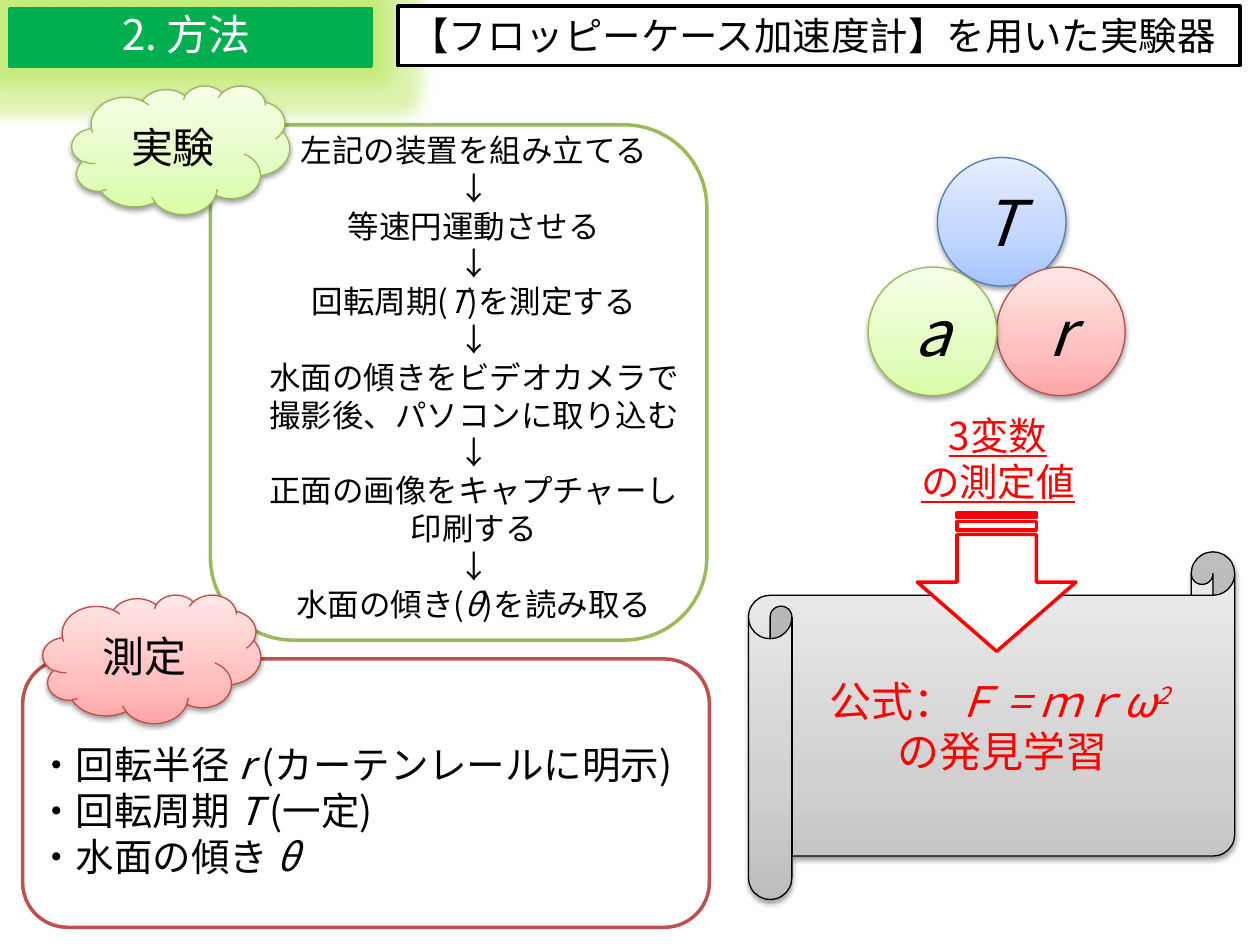
"""Build the slide on the method of the floppy-case accelerometer experiment."""
from dataclasses import dataclass

from lxml import etree
from pptx import Presentation
from pptx.dml.color import RGBColor
from pptx.enum.shapes import MSO_SHAPE
from pptx.enum.text import MSO_ANCHOR, MSO_AUTO_SIZE, PP_ALIGN
from pptx.oxml import parse_xml
from pptx.oxml.ns import qn
from pptx.util import Emu, Pt

RECTANGLE = MSO_SHAPE.RECTANGLE
ROUNDED = MSO_SHAPE.ROUNDED_RECTANGLE
OVAL = MSO_SHAPE.OVAL
CLOUD = MSO_SHAPE.CLOUD
SCROLL = MSO_SHAPE.HORIZONTAL_SCROLL
ARROW = MSO_SHAPE.STRIPED_RIGHT_ARROW
CENTER, LEFT = PP_ALIGN.CENTER, PP_ALIGN.LEFT
TOP, MIDDLE = MSO_ANCHOR.TOP, MSO_ANCHOR.MIDDLE
GROW = MSO_AUTO_SIZE.SHAPE_TO_FIT_TEXT

PX = 9144
DRAWING = "http://schemas.openxmlformats.org/drawingml/2006/main"
EFFECTS = '<a:effectLst xmlns:a="%s">%s</a:effectLst>'
COLOR = '<a:srgbClr val="%s"><a:alpha val="%d"/></a:srgbClr>'


@dataclass(frozen=True)
class Theme:
    """Colours, font and type sizes of the slide."""
    font: str = "Noto Sans CJK JP"
    black: str = "000000"
    white: str = "FFFFFF"
    red: str = "FF0000"
    header: str = "00B050"
    glow: str = "A8E034"
    green_line: str = "9BBB59"
    red_line: str = "C0504D"
    gray: tuple = ("BDBDBD", "D1D1D1", "EEEEEE", "000000")
    blue: tuple = ("A4C4FF", "BFD4FF", "E6EEFF", "4B7EBC")
    rose: tuple = ("FFA6A5", "FFC0BF", "FFE7E7", "BF4C48")
    lime: tuple = ("DAFDA7", "E4FCC2", "F5FFE7", "98B955")
    small: int = 18
    body: int = 22
    title: int = 24
    symbol: int = 36


def add_run(paragraph, text, *, font, size, color, italic=False, underline=False, baseline=0):
    """Append one formatted run to a paragraph."""
    run = paragraph.add_run()
    run.text = text
    run.font.name = font
    run.font.size = Pt(size)
    run.font.color.rgb = RGBColor.from_string(color)
    run.font.italic = italic
    run.font.underline = underline
    properties = run.font._element
    etree.SubElement(properties, qn("a:ea")).set("typeface", font)
    if baseline:
        properties.set("baseline", str(baseline))


class SlideBuilder:
    """Hold the theme and the current slide, and add elements to it."""

    def __init__(self, slide, theme):
        """Keep the slide and its theme."""
        self.slide = slide
        self.theme = theme

    def set_lines(self, shape, lines, size, color=None, align=CENTER, anchor=TOP,
                  wrap=True, underline=False):
        """Fill a shape with lines, where *marks* set italics and ^ starts a superscript."""
        frame = shape.text_frame
        frame.word_wrap = wrap
        frame.vertical_anchor = anchor
        style = dict(font=self.theme.font, size=size, color=color or self.theme.black,
                     underline=underline)
        for index, line in enumerate(lines):
            paragraph = frame.paragraphs[0] if index == 0 else frame.add_paragraph()
            paragraph.alignment = align
            for part, piece in enumerate(line.split("*")):
                base, _, power = piece.partition("^")
                italic = part % 2 == 1
                if base:
                    add_run(paragraph, base, italic=italic, **style)
                if power:
                    add_run(paragraph, power, italic=italic, baseline=30000, **style)

    def text(self, box, lines, size, **style):
        """Add a text box that grows with its text."""
        shape = self.slide.shapes.add_textbox(*(Emu(n * PX) for n in box))
        self.set_lines(shape, lines, size, **style)
        shape.text_frame.auto_size = GROW

    def panel(self, kind, box, line, fill=None, weight=2):
        """Add a flat shape with an outline and an optional fill."""
        shape = self.slide.shapes.add_shape(kind, *(Emu(n * PX) for n in box))
        shape.shadow.inherit = False
        shape.line.color.rgb = RGBColor.from_string(line)
        shape.line.width = Pt(weight)
        if fill:
            shape.fill.solid()
            shape.fill.fore_color.rgb = RGBColor.from_string(fill)
        else:
            shape.fill.background()
        return shape

    def effect(self, shape, content):
        """Replace the effect list of a shape."""
        properties = shape._element.spPr
        old = properties.find(qn("a:effectLst"))
        properties.replace(old, parse_xml(EFFECTS % (DRAWING, content)))

    def glow(self, shape, color):
        """Surround a shape with a soft glow."""
        self.effect(shape, '<a:glow rad="228600">%s</a:glow>' % (COLOR % (color, 40000)))

    def glossy(self, kind, box, palette, lines, size, color=None):
        """Add a shape with a vertical gradient, a soft shadow and centred text."""
        *stops, line = palette
        shape = self.panel(kind, box, line, weight=0.75)
        gradient = "".join(
            '<a:gs pos="%d"><a:srgbClr val="%s"/></a:gs>' % (position * 1000, stop)
            for position, stop in zip((0, 35, 100), stops))
        properties = shape._element.spPr
        properties.replace(properties.find(qn("a:noFill")), parse_xml(
            '<a:gradFill xmlns:a="%s" rotWithShape="1"><a:gsLst>%s</a:gsLst>'
            '<a:lin ang="16200000" scaled="1"/></a:gradFill>' % (DRAWING, gradient)))
        self.effect(shape, '<a:outerShdw blurRad="40000" dist="20000" dir="5400000" '
                    'rotWithShape="0">%s</a:outerShdw>' % (COLOR % (self.theme.black, 38000)))
        self.set_lines(shape, lines, size, color=color, anchor=MIDDLE)


def build(builder):
    """Place all elements from back to front."""
    theme = builder.theme
    builder.glossy(SCROLL, (594, 438, 386, 276), theme.gray,
                   ["公式：*Ｆ = ｍｒω^2 *", "の発見学習"], theme.title, color=theme.red)
    header = builder.panel(RECTANGLE, (8, 7, 287, 46), theme.header, theme.header)
    builder.glow(header, theme.glow)
    builder.text((12, 2, 272, 51), ["2. 方法"], theme.title, color=theme.white)
    subject = builder.panel(RECTANGLE, (316, 5, 668, 47), theme.black, theme.white)
    builder.set_lines(subject, ["【フロッピーケース加速度計】を用いた実験器"], theme.body,
                      align=LEFT, wrap=False)
    builder.text((720, 322, 144, 84), ["3変数", "の測定値"], theme.body,
                 color=theme.red, wrap=False, underline=True)

    for left, top, palette, symbol in (
            (744, 125, theme.blue, "T"),
            (791, 212, theme.rose, "r"),
            (689, 212, theme.lime, "a")):
        builder.glossy(OVAL, (left, top, 102, 102), palette, [f"*{symbol}*"], theme.symbol)

    builder.panel(ROUNDED, (167, 99, 394, 409), theme.green_line, theme.white)
    builder.glossy(CLOUD, (57, 68, 173, 102), theme.lime, ["実験"], theme.title)
    steps = (
        ["左記の装置を組み立てる"],
        ["等速円運動させる"],
        ["回転周期(*T*)を測定する"],
        ["水面の傾きをビデオカメラで", "撮影後、パソコンに取り込む"],
        ["正面の画像をキャプチャーし", "印刷する"],
        ["水面の傾き(*θ*)を読み取る"],
    )
    lines = [line for step in steps for line in (*step, "↓")][:-1]
    builder.text((202, 99, 348, 404), lines, theme.small, wrap=False)

    builder.text((20, 583, 560, 121),
                 ["・回転半径 *r* (カーテンレールに明示)", "・回転周期 *T* (一定)", "・水面の傾き *θ*"],
                 theme.body, align=LEFT, wrap=False)
    builder.panel(ROUNDED, (18, 523, 545, 213), theme.red_line)
    builder.glossy(CLOUD, (34, 472, 173, 102), theme.rose, ["測定"], theme.title)
    arrow = builder.panel(ARROW, (736, 399, 110, 126), theme.red, theme.white)
    arrow.rotation = 90


def main():
    """Create the presentation and save it."""
    presentation = Presentation()
    presentation.slide_width = Emu(1000 * PX)
    presentation.slide_height = Emu(750 * PX)
    slide = presentation.slides.add_slide(presentation.slide_layouts[6])
    build(SlideBuilder(slide, Theme()))
    presentation.save("out.pptx")


if __name__ == "__main__":
    main()
